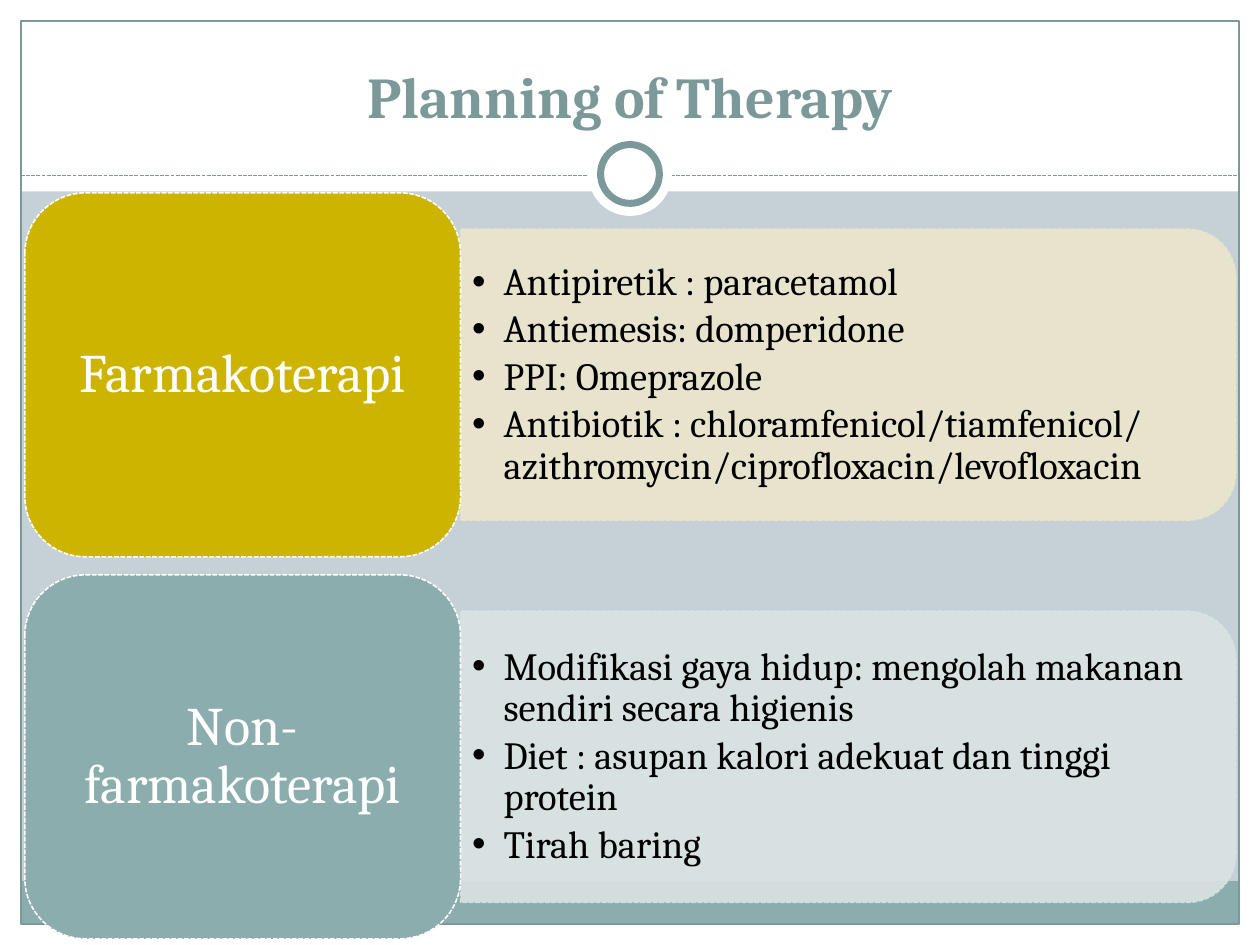
from pptx import Presentation
from pptx.dml.color import RGBColor
from pptx.enum.dml import MSO_LINE_DASH_STYLE as Dash
from pptx.enum.shapes import MSO_CONNECTOR, MSO_SHAPE as Shape
from pptx.enum.text import MSO_ANCHOR as Anchor, PP_ALIGN as Align
from pptx.oxml.ns import qn
from pptx.util import Pt
from lxml.etree import SubElement

WHITE = RGBColor(0xFF, 0xFF, 0xFF)
BLACK = RGBColor(0, 0, 0)
BACKDROP = RGBColor(0xC5, 0xD1, 0xD7)
TEAL = RGBColor(0x8C, 0xAD, 0xAE)
DARK_TEAL = RGBColor(0x7C, 0x99, 0x9A)
PALE_TEAL = RGBColor(0xDB, 0xE3, 0xE3)
GOLD = RGBColor(0xCC, 0xB4, 0x00)
PALE_GOLD = RGBColor(0xEC, 0xE5, 0xCC)

FONT = "Cambria"
WIDTH, HEIGHT = 720, 540
MARGIN = 12
HEADER_HEIGHT = 109.4

THERAPIES = [
    ("Farmakoterapi", GOLD, PALE_GOLD, [
        "Antipiretik : paracetamol",
        "Antiemesis: domperidone",
        "PPI: Omeprazole",
        "Antibiotik : chloramfenicol/tiamfenicol/ azithromycin/ciprofloxacin/levofloxacin",
    ]),
    ("Non-farmakoterapi", TEAL, PALE_TEAL, [
        "Modifikasi gaya hidup: mengolah makanan sendiri secara higienis",
        "Diet : asupan kalori adekuat dan tinggi protein",
        "Tirah baring",
    ]),
]


def add_block(slide, kind, box, fill=None, line=None, weight=0.75, dash=None):
    """Add a flat preset shape in the box (left, top, width, height)."""
    block = slide.shapes.add_shape(kind, *map(Pt, box))
    block.shadow.inherit = False
    if fill is None:
        block.fill.background()
    else:
        block.fill.solid()
        block.fill.fore_color.rgb = fill
    if line is None:
        block.line.fill.background()
    else:
        block.line.color.rgb = line
        block.line.width = Pt(weight)
        block.line.dash_style = dash
    return block


def set_frame(frame, anchor, side, edge):
    """Wrap a text frame and set its anchor and insets."""
    frame.word_wrap = True
    frame.vertical_anchor = anchor
    frame.margin_left = frame.margin_right = Pt(side)
    frame.margin_top = frame.margin_bottom = Pt(edge)


def add_run(paragraph, text, size, color, bold=False):
    """Add one styled run to a paragraph."""
    run = paragraph.add_run()
    run.text = text
    run.font.name = FONT
    run.font.size = Pt(size)
    run.font.bold = bold
    run.font.color.rgb = color


def set_bullet(paragraph, indent):
    """Give a paragraph a round bullet with a hanging indent."""
    properties = paragraph._p.get_or_add_pPr()
    properties.set("marL", str(Pt(indent)))
    properties.set("indent", str(-Pt(indent)))
    SubElement(properties, qn("a:buFont"), typeface="Arial")
    SubElement(properties, qn("a:buChar"), char="•")


def draw_frame(slide, box):
    """Draw the white margins, footer band, border and header rule."""
    left, top, width, height = box
    right, bottom = left + width, top + height
    for margin in (
        (0, bottom, WIDTH, HEIGHT - bottom),
        (0, 0, WIDTH, HEADER_HEIGHT),
        (0, 0, left, HEIGHT),
        (right, 0, WIDTH - right, HEIGHT),
    ):
        add_block(slide, Shape.RECTANGLE, margin, WHITE)
    add_block(slide, Shape.RECTANGLE, (left, bottom - 24.5, width, 24.5), TEAL)
    add_block(slide, Shape.RECTANGLE, box, line=DARK_TEAL)
    rule = slide.shapes.add_connector(
        MSO_CONNECTOR.STRAIGHT, Pt(left), Pt(100.5), Pt(right), Pt(100.5))
    rule.line.color.rgb = DARK_TEAL
    rule.line.width = Pt(0.75)
    rule.line.dash_style = Dash.SQUARE_DOT
    SubElement(rule._element.spPr, qn("a:effectLst"))


def draw_ring(slide, box):
    """Draw the ring and its white halo inside the box."""
    left, top, size, _ = box
    inset = 7.2
    inner = size - 2 * inset
    add_block(slide, Shape.OVAL, box, WHITE)
    add_block(slide, Shape.OVAL, (left + inset, top + inset, inner, inner),
              WHITE, DARK_TEAL, 4)


def draw_title(slide, box):
    """Write the slide title at the bottom of the box."""
    frame = slide.shapes.add_textbox(*map(Pt, box)).text_frame
    set_frame(frame, Anchor.BOTTOM, 7.2, 3.6)
    frame.paragraphs[0].alignment = Align.CENTER
    add_run(frame.paragraphs[0], "Planning of Therapy", 33, DARK_TEAL, True)


def draw_panel(slide, box, tint, items):
    """Draw the translucent panel rounded on the right, with its bullets."""
    left, top, width, height = box
    turned = (left + (width - height) / 2, top + (height - width) / 2, height, width)
    panel = add_block(slide, Shape.ROUND_2_SAME_RECTANGLE, turned,
                      tint, tint, 0.9, Dash.SQUARE_DOT)
    panel.rotation = 90
    for color in panel._element.spPr.iter(qn("a:srgbClr")):
        SubElement(color, qn("a:alpha"), val="90000")

    text_box = (left, top + 8, width - 8, height - 16)
    frame = slide.shapes.add_textbox(*map(Pt, text_box)).text_frame
    set_frame(frame, Anchor.MIDDLE, 6.6, 3.3)
    for index, item in enumerate(items):
        paragraph = frame.add_paragraph() if index else frame.paragraphs[0]
        paragraph.line_spacing = 0.9
        paragraph.space_after = Pt(3.3)
        set_bullet(paragraph, 18)
        add_run(paragraph, item, 22, BLACK)


def draw_therapy(slide, box, name, color, tint, items):
    """Draw one therapy row: its panel, then the label beside it."""
    left, top, width, height = box
    label_width = 249
    panel_height = height * 0.8
    panel_box = (left + label_width, top + (height - panel_height) / 2,
                 width - label_width, panel_height)
    draw_panel(slide, panel_box, tint, items)
    label = add_block(slide, Shape.ROUNDED_RECTANGLE, (left, top, label_width, height),
                      color, WHITE, 0.9, Dash.SQUARE_DOT)
    set_frame(label.text_frame, Anchor.MIDDLE, 9.3, 4.6)
    paragraph = label.text_frame.paragraphs[0]
    paragraph.alignment = Align.CENTER
    paragraph.line_spacing = 0.9
    add_run(paragraph, name, 31, WHITE)


def main():
    """Build and save the slide."""
    deck = Presentation()
    deck.slide_width, deck.slide_height = Pt(WIDTH), Pt(HEIGHT)
    slide = deck.slides.add_slide(deck.slide_layouts[6])
    slide.background.fill.solid()
    slide.background.fill.fore_color.rgb = BACKDROP
    draw_frame(slide, (MARGIN, MARGIN, WIDTH - 2 * MARGIN, HEIGHT - 2 * MARGIN))
    draw_ring(slide, (336, 75.4, 48, 48))
    draw_title(slide, (24, 18, 672, 60))
    row_height, gap = 208, 10.3
    for index, therapy in enumerate(THERAPIES):
        row_top = 110.2 + index * (row_height + gap)
        draw_therapy(slide, (14.2, row_top, 692, row_height), *therapy)
    deck.save("out.pptx")


if __name__ == "__main__":
    main()
